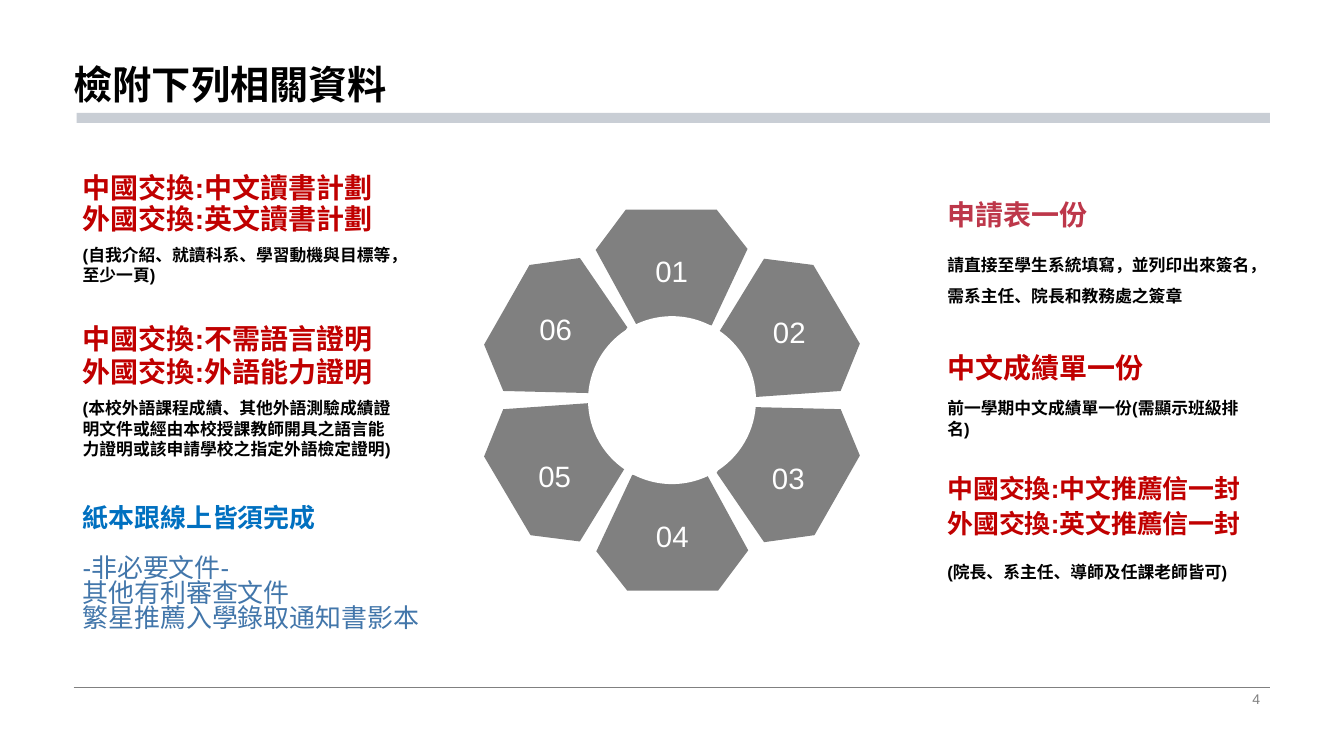
"""Build the slide that lists the documents to attach to an exchange application."""
from dataclasses import dataclass
from typing import Optional

import pptx
import pptx.dml.color
import pptx.enum.shapes
import pptx.enum.text
import pptx.util
from lxml import etree

Pt = pptx.util.Pt
ALIGN = pptx.enum.text.PP_ALIGN
ANCHOR = pptx.enum.text.MSO_ANCHOR
SHAPE = pptx.enum.shapes.MSO_SHAPE

COLOURS = {
    "black": "000000", "white": "FFFFFF", "grey": "808080", "bar": "C9CED5",
    "red": "C00000", "rose": "BD374A", "blue": "0070C0", "steel": "4276AA",
}
FONT = "Arial"
LEFT_COLUMN, RIGHT_COLUMN = 52, 669.6
COLUMN_WIDTH, HEADING_HEIGHT, BODY_HEIGHT = 237, 31, 49
FIRST_ROW, ROW_STEP = 140.4, 109.4
CENTRE_X, CENTRE_Y, HUB_RADIUS = 480, 285.8, 60
PETALS = [
    [(-33, -136), (32, -136), (54, -108), (28.3, -53.3), (-25, -53.3), (-54.5, -107.3)],
    [(65.8, -101), (101, -96.5), (134.2, -40.3), (120.5, -6.5), (60, -2.2), (33.4, -48.2)],
    [(58.6, 5), (120.5, 6.5), (134.2, 39.6), (101.8, 96.5), (65.8, 101.5), (31.9, 52)],
]


@dataclass
class Line:
    text: str
    size: float
    colour: str = "black"
    bold: bool = True
    spacing: float = 1.0
    before: float = 0
    align: ALIGN = ALIGN.LEFT


@dataclass
class Requirement:
    left: float
    row: int
    heading: Line
    body: Line
    upper: Optional[Line] = None
    rise: float = 0


REQUIREMENTS = [
    Requirement(RIGHT_COLUMN, 0, Line("申請表一份", 20, "rose", spacing=0.9),
                Line("請直接至學生系統填寫，並列印出來簽名，需系主任、院長和教務處之簽章", 12, spacing=1.5)),
    Requirement(RIGHT_COLUMN, 1, Line("中文成績單一份", 20, "red", spacing=0.9),
                Line("前一學期中文成績單一份(需顯示班級排名)", 12)),
    Requirement(RIGHT_COLUMN, 2, Line("外國交換:英文推薦信一封", 18.5, "red"),
                Line("(院長、系主任、導師及任課老師皆可)", 12, spacing=1.5),
                Line("中國交換:中文推薦信一封", 18.5, "red"), 25.2),
    Requirement(LEFT_COLUMN, 0, Line("外國交換:英文讀書計劃", 20, "red"),
                Line("(自我介紹、就讀科系、學習動機與目標等，至少一頁)", 12),
                Line("中國交換:中文讀書計劃", 20, "red"), 22.3),
    Requirement(LEFT_COLUMN, 1, Line("外國交換:外語能力證明", 20, "red"),
                Line("(本校外語課程成績、其他外語測驗成績證明文件或經由本校授課教師開具之"
                     "語言能力證明或該申請學校之指定外語檢定證明)", 12),
                Line("中國交換:不需語言證明", 20, "red"), 23.7),
]
CLOSING = [
    Line("紙本跟線上皆須完成", 18.5, "blue", spacing=0.8),
    Line("-非必要文件-", 18.5, "steel", False, 0.8, before=18),
    Line("其他有利審查文件", 18.5, "steel", False, 0.8),
    Line("繁星推薦入學錄取通知書影本", 18.5, "steel", False, 0.8),
]


def colour(name: str) -> pptx.dml.color.RGBColor:
    """Return the named colour."""
    return pptx.dml.color.RGBColor.from_string(COLOURS[name])


def write(shape, lines: list[Line], anchor: ANCHOR = ANCHOR.TOP) -> None:
    """Fill a shape with one paragraph for each line."""
    frame = shape.text_frame
    frame.word_wrap = True
    frame.vertical_anchor = anchor
    for index, line in enumerate(lines):
        paragraph = frame.add_paragraph() if index else frame.paragraphs[0]
        paragraph.alignment = line.align
        paragraph.line_spacing = line.spacing
        paragraph.space_before = Pt(line.before)
        run = paragraph.add_run()
        run.text = line.text
        run.font.name = FONT
        run.font.size = Pt(line.size)
        run.font.bold = line.bold
        run.font.color.rgb = colour(line.colour)


def add_text(slide, left: float, top: float, width: float, height: float,
             lines: list[Line], anchor: ANCHOR = ANCHOR.TOP) -> None:
    """Add a wrapped text box."""
    box = slide.shapes.add_textbox(Pt(left), Pt(top), Pt(width), Pt(height))
    write(box, lines, anchor)


def paint(shape, name: str) -> None:
    """Give a shape a plain fill without outline or shadow."""
    shape.shadow.inherit = False
    shape.fill.solid()
    shape.fill.fore_color.rgb = colour(name)
    shape.line.fill.background()


def add_frame(slide) -> None:
    """Add the title, its bar, the footer line and the page number."""
    title = slide.shapes.title
    title.left, title.top, title.width, title.height = Pt(52.6), Pt(0), Pt(854.6), Pt(80.6)
    title.text_frame.auto_size = pptx.enum.text.MSO_AUTO_SIZE.NONE
    title.text_frame.margin_left = title.text_frame.margin_right = Pt(0)
    write(title, [Line("檢附下列相關資料", 28, spacing=0.9)], ANCHOR.BOTTOM)
    bar = slide.shapes.add_shape(SHAPE.RECTANGLE, Pt(54.7), Pt(80.6), Pt(852.5), Pt(7.2))
    paint(bar, "bar")
    footer = slide.shapes.add_connector(
        pptx.enum.shapes.MSO_CONNECTOR.STRAIGHT, Pt(52.6), Pt(491), Pt(907.2), Pt(491))
    footer.line.color.rgb = colour("grey")
    footer.line.width = Pt(0.5)
    properties = footer._element.spPr
    etree.SubElement(properties, pptx.oxml.ns.qn("a:effectLst"))
    add_text(slide, 678.2, 491, 229, 16.6,
             [Line("4", 10, "grey", False, align=ALIGN.RIGHT)], ANCHOR.MIDDLE)


def add_petal(slide, number: int) -> None:
    """Add a numbered petal; the last three are the first three turned by half."""
    turn = 1 if number <= len(PETALS) else -1
    points = [(Pt(CENTRE_X + turn * x), Pt(CENTRE_Y + turn * y))
              for x, y in PETALS[(number - 1) % len(PETALS)]]
    builder = slide.shapes.build_freeform(*points[0])
    builder.add_line_segments(points[1:], close=True)
    petal = builder.convert_to_shape()
    paint(petal, "grey")
    label = Line(f"{number:02}", 21, "white", False, 1.2, align=ALIGN.CENTER)
    write(petal, [label], ANCHOR.MIDDLE)


def add_wheel(slide) -> None:
    """Add the ring of petals and its round hub."""
    for number in range(1, 2 * len(PETALS) + 1):
        add_petal(slide, number)
    hub = slide.shapes.add_shape(
        SHAPE.OVAL, Pt(CENTRE_X - HUB_RADIUS), Pt(CENTRE_Y - HUB_RADIUS),
        Pt(2 * HUB_RADIUS), Pt(2 * HUB_RADIUS))
    paint(hub, "white")


def add_requirement(slide, item: Requirement) -> None:
    """Add the headings and the explanation of one requirement."""
    top = FIRST_ROW + item.row * ROW_STEP
    if item.upper:
        add_text(slide, item.left, top - item.rise, COLUMN_WIDTH, HEADING_HEIGHT, [item.upper])
    add_text(slide, item.left, top, COLUMN_WIDTH, HEADING_HEIGHT, [item.heading])
    add_text(slide, item.left, top + HEADING_HEIGHT, COLUMN_WIDTH, BODY_HEIGHT, [item.body])


def main() -> None:
    """Build and save the presentation."""
    presentation = pptx.Presentation()
    presentation.slide_width, presentation.slide_height = Pt(960), Pt(540)
    slide = presentation.slides.add_slide(presentation.slide_layouts.get_by_name("Title Only"))
    add_frame(slide)
    add_wheel(slide)
    for item in REQUIREMENTS:
        add_requirement(slide, item)
    add_text(slide, LEFT_COLUMN, FIRST_ROW + 2 * ROW_STEP, 279.4, 108.7, CLOSING)
    presentation.save("out.pptx")


if __name__ == "__main__":
    main()
